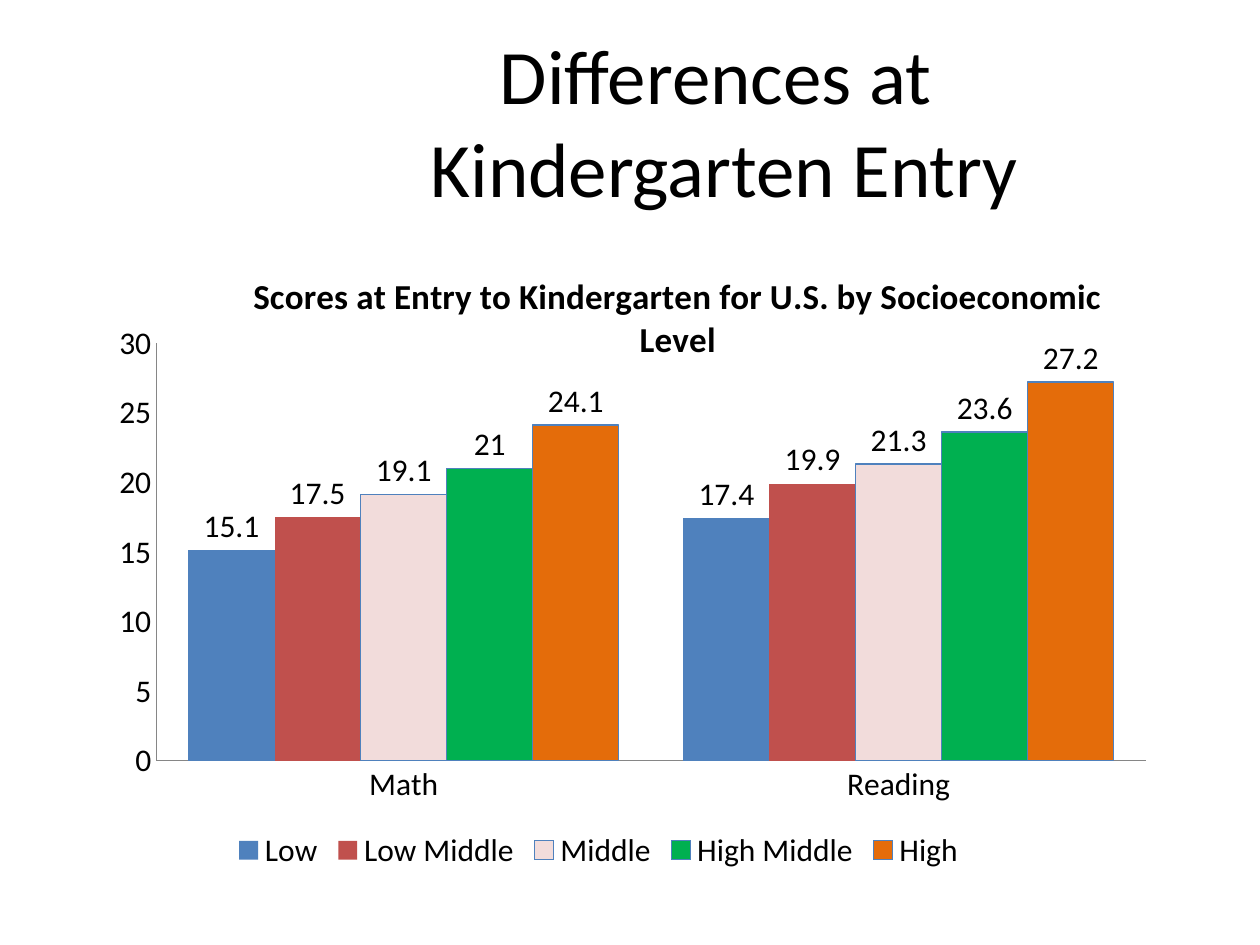
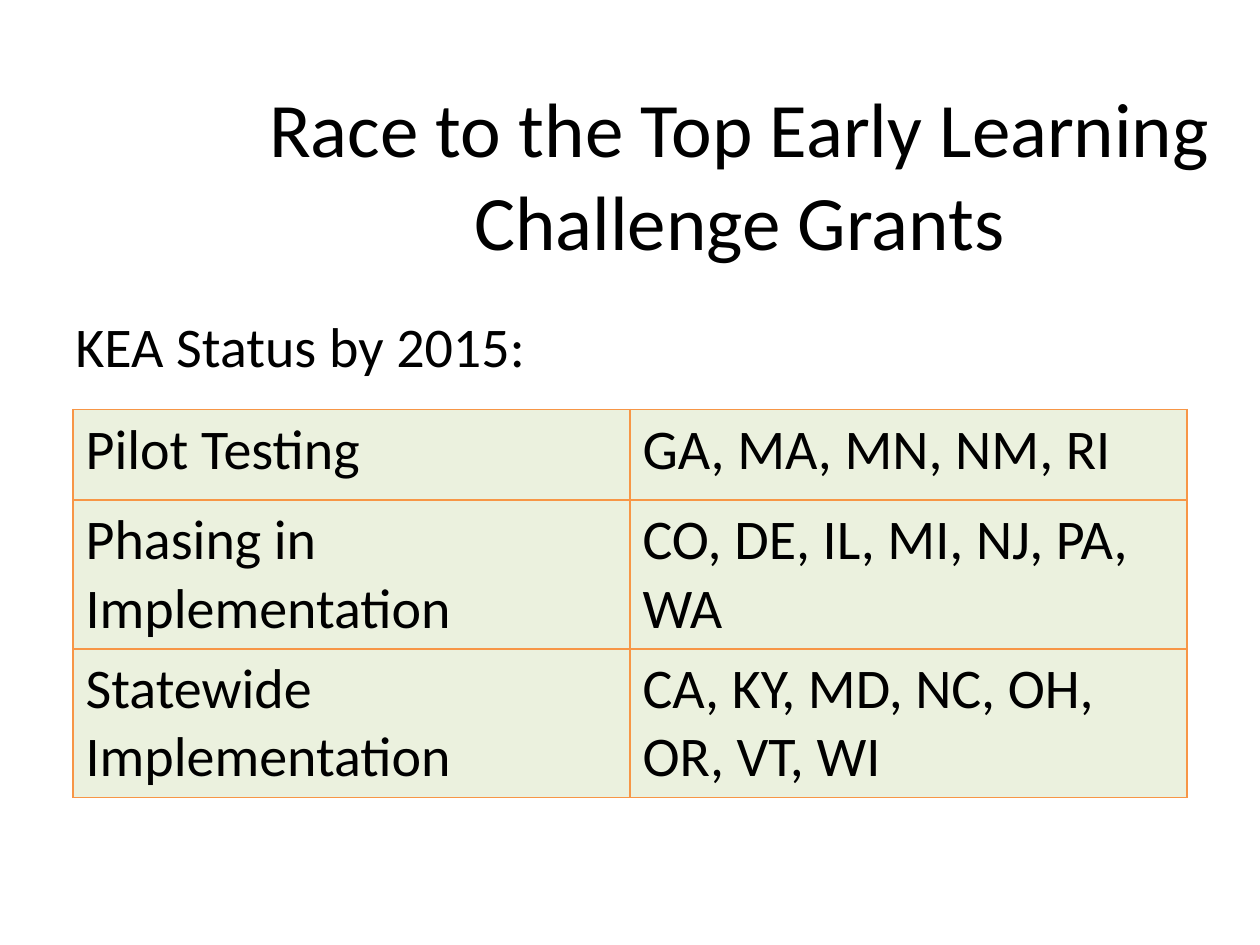
from lxml import etree
from pptx import Presentation
from pptx import util as u
from pptx.chart.data import CategoryChartData
from pptx.dml.color import RGBColor
from pptx.enum import chart as ch, text
from pptx.oxml import parse_xml
from pptx.oxml.ns import nsdecls, qn

BLACK = RGBColor(0x00, 0x00, 0x00)
BLUE = RGBColor(0x4F, 0x81, 0xBD)
RED = RGBColor(0xC0, 0x50, 0x4D)
PINK = RGBColor(0xF2, 0xDC, 0xDB)
GREEN = RGBColor(0x00, 0xB0, 0x50)
ORANGE = RGBColor(0xE4, 0x6C, 0x0A)
AXIS = RGBColor(0x86, 0x86, 0x86)
CELL = RGBColor(0xEB, 0xF1, 0xDE)
BORDER = RGBColor(0xF7, 0x96, 0x46)
FONT = "Calibri"

prs = Presentation()
prs.slide_width, prs.slide_height = u.Inches(10), u.Inches(7.5)


def style(font, size):
    font.name, font.size = FONT, u.Pt(size)
    font.color.rgb = BLACK


def layout_xml(**parts):
    items = "".join(f'<c:{k} val="{v}"/>' for k, v in parts.items())
    return parse_xml(f'<c:layout {nsdecls("c")}><c:manualLayout>{items}'
                     '</c:manualLayout></c:layout>')


titles = [
    (["Differences at ", "Kindergarten Entry"], (1.75, 0.33, 8, 1.25)),
    (["Race to the Top Early Learning Challenge Grants"], (1.58, 0.75, 8.58, 1.25)),
]
slides = []
for lines, box in titles:
    s = prs.slides.add_slide(prs.slide_layouts[5])
    sp = s.shapes.title
    sp.left, sp.top, sp.width, sp.height = map(u.Inches, box)
    tf = sp.text_frame
    tf.word_wrap = True
    tf.auto_size = text.MSO_AUTO_SIZE.NONE
    tf.vertical_anchor = text.MSO_ANCHOR.MIDDLE
    p = tf.paragraphs[0]
    p.alignment = text.PP_ALIGN.CENTER
    for i, line in enumerate(lines):
        if i:
            p.add_line_break()
        r = p.add_run()
        r.text = line
        style(r.font, 44)
    slides.append(s)
scores, grants = slides

levels = [
    ("Low", (15.1, 17.4), BLUE, False),
    ("Low Middle", (17.5, 19.9), RED, False),
    ("Middle", (19.1, 21.3), PINK, True),
    ("High Middle", (21, 23.6), GREEN, True),
    ("High", (24.1, 27.2), ORANGE, True),
]
data = CategoryChartData()
data.categories = ["Math", "Reading"]
for name, values, color, outlined in levels:
    data.add_series(name, values)
chart = scores.shapes.add_chart(
    ch.XL_CHART_TYPE.COLUMN_CLUSTERED, u.Inches(0.25), u.Inches(2),
    u.Inches(9), u.Inches(4.95), data).chart
style(chart.font, 18)

chart.has_title = True
p = chart.chart_title.text_frame.paragraphs[0]
r = p.add_run()
r.text = "Scores at Entry to Kindergarten for U.S. by Socioeconomic Level"
style(r.font, 20)
r.font.bold = True
title = chart.chart_title._element
for old in title.findall(qn("c:layout")) + title.findall(qn("c:overlay")):
    title.remove(old)
title.find(qn("c:tx")).addnext(layout_xml(xMode="edge", yMode="edge", x=0.19, y=0.02))
title.find(qn("c:layout")).addnext(parse_xml(f'<c:overlay {nsdecls("c")} val="1"/>'))

area = chart._chartSpace.chart.plotArea
for old in area.findall(qn("c:layout")):
    area.remove(old)
area.insert(0, layout_xml(layoutTarget="inner", xMode="edge", yMode="edge",
                          x=0.11, y=0.146, w=0.873, h=0.67))

chart.has_legend = True
chart.legend.position = ch.XL_LEGEND_POSITION.BOTTOM
chart.legend.include_in_layout = False
style(chart.legend.font, 18)

for axis in (chart.category_axis, chart.value_axis):
    axis.has_major_gridlines = False
    axis.major_tick_mark = axis.minor_tick_mark = ch.XL_TICK_MARK.NONE
    axis.format.line.color.rgb = AXIS
    axis.format.line.width = u.Pt(0.75)
    style(axis.tick_labels.font, 18)
chart.value_axis.minimum_scale = 0
chart.value_axis.maximum_scale = 30
chart.value_axis.major_unit = 5

plot = chart.plots[0]
plot.gap_width, plot.overlap = 75, 0
plot.vary_by_categories = False
for series, (name, values, color, outlined) in zip(plot.series, levels):
    series.invert_if_negative = False
    series.format.fill.solid()
    series.format.fill.fore_color.rgb = color
    if outlined:
        series.format.line.color.rgb = BLUE
        series.format.line.width = u.Pt(0.75)
    else:
        series.format.line.fill.background()
    labels = series.data_labels
    labels.show_value = True
    labels.position = ch.XL_LABEL_POSITION.OUTSIDE_END
    style(labels.font, 18)

sp = grants.shapes.add_textbox(u.Inches(0.5), u.Inches(2.42), u.Inches(8.75), u.Inches(0.75))
tf = sp.text_frame
tf.word_wrap = True
r = tf.paragraphs[0].add_run()
r.text = "KEA Status by 2015:"
style(r.font, 32)

statuses = [
    ("Pilot Testing", "GA, MA, MN, NM, RI", 0.72),
    ("Phasing in Implementation", "CO, DE, IL, MI, NJ, PA, WA", 1.18),
    ("Statewide Implementation", "CA, KY, MD, NC, OH, OR, VT, WI", 1.18),
]
table = grants.shapes.add_table(
    len(statuses), 2, u.Inches(0.58), u.Inches(3.25), u.Inches(8.84),
    u.Inches(sum(row[2] for row in statuses))).table
table.first_row = table.horz_banding = False
for i, (status, states, height) in enumerate(statuses):
    table.rows[i].height = u.Inches(height)
    for j, words in enumerate((status, states)):
        cell = table.cell(i, j)
        r = cell.text_frame.paragraphs[0].add_run()
        r.text = words
        style(r.font, 32)
        props = cell._tc.get_or_add_tcPr()
        for side in ("lnL", "lnR", "lnT", "lnB"):
            ln = etree.SubElement(props, qn(f"a:{side}"), w=str(u.Pt(1)))
            fill = etree.SubElement(ln, qn("a:solidFill"))
            etree.SubElement(fill, qn("a:srgbClr"), val=str(BORDER))
        cell.fill.solid()
        cell.fill.fore_color.rgb = CELL

prs.save("out.pptx")
